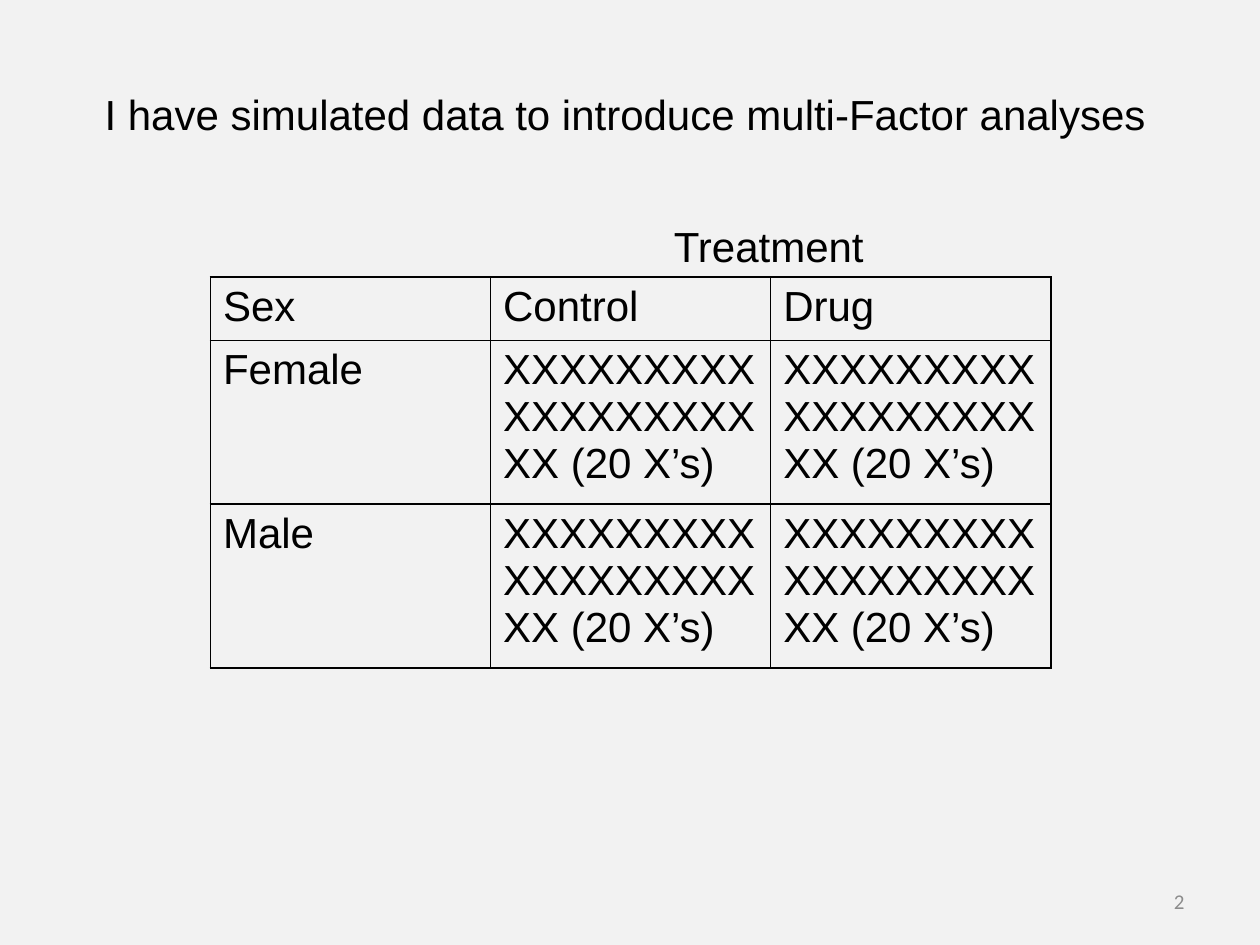
from lxml.etree import SubElement
from pptx import Presentation
from pptx.dml.color import RGBColor
from pptx.enum.text import MSO_ANCHOR, MSO_AUTO_SIZE, PP_ALIGN
from pptx.oxml.ns import qn
from pptx.util import Inches, Pt

BLACK = "000000"
BACKGROUND = "F2F2F2"
NUMBER_GREY = "8C8C8C"

OBSERVATIONS = "X" * 20 + " (20 X’s)"
DESIGN = [
    ["Sex", "Control", "Drug"],
    ["Female", OBSERVATIONS, OBSERVATIONS],
    ["Male", OBSERVATIONS, OBSERVATIONS],
]
ROW_HEIGHTS = [0.47, 1.22, 1.22]


def rgb(value):
    return RGBColor.from_string(value)


def write(frame, text, size=24, font="Arial", color=BLACK, align=PP_ALIGN.LEFT):
    frame.text = text
    paragraph = frame.paragraphs[0]
    paragraph.alignment = align
    for run in paragraph.runs:
        run.font.size = Pt(size)
        run.font.name = font
        run.font.bold = False
        run.font.color.rgb = rgb(color)


def add_title(slide, text, left, top, width, height):
    title = slide.shapes.title
    title.left, title.top = Inches(left), Inches(top)
    title.width, title.height = Inches(width), Inches(height)
    frame = title.text_frame
    frame.word_wrap = False
    frame.auto_size = MSO_AUTO_SIZE.SHAPE_TO_FIT_TEXT
    frame.vertical_anchor = MSO_ANCHOR.TOP
    write(frame, text)


def add_label(slide, text, left, top, width, height, wrap=False,
              anchor=MSO_ANCHOR.TOP, **style):
    label = slide.shapes.add_textbox(
        Inches(left), Inches(top), Inches(width), Inches(height))
    frame = label.text_frame
    frame.word_wrap = wrap
    frame.auto_size = MSO_AUTO_SIZE.NONE if wrap else MSO_AUTO_SIZE.SHAPE_TO_FIT_TEXT
    frame.vertical_anchor = anchor
    write(frame, text, **style)


def outline_cell(cell, color=BLACK, width=1):
    properties = cell._tc.get_or_add_tcPr()
    for position, side in enumerate(("lnL", "lnR", "lnT", "lnB")):
        line = SubElement(properties, qn(f"a:{side}"), w=str(Pt(width)))
        fill = SubElement(line, qn("a:solidFill"))
        SubElement(fill, qn("a:srgbClr"), val=color)
        properties.insert(position, line)


def add_design_table(slide, rows, left, top, width, row_heights):
    table = slide.shapes.add_table(
        len(rows), len(rows[0]), Inches(left), Inches(top),
        Inches(width), Inches(sum(row_heights))).table
    table.first_row = False
    table.horz_banding = False
    for row, height, texts in zip(table.rows, row_heights, rows):
        row.height = Inches(height)
        for cell, text in zip(row.cells, texts):
            write(cell.text_frame, text)
            cell.fill.background()
            outline_cell(cell)


def main():
    deck = Presentation()
    deck.slide_width, deck.slide_height = Inches(10), Inches(7.5)
    slide = deck.slides.add_slide(deck.slide_layouts[5])
    slide.background.fill.solid()
    slide.background.fill.fore_color.rgb = rgb(BACKGROUND)

    add_design_table(slide, DESIGN, 1.67, 2.2, 6.67, ROW_HEIGHTS)
    add_label(slide, "Treatment", 5.25, 1.7, 1.73, 0.5)
    add_title(slide, "I have simulated data to introduce multi-Factor analyses",
              0.73, 0.65, 8.55, 0.5)
    add_label(slide, "2", 7.17, 6.95, 2.33, 0.4, wrap=True,
              anchor=MSO_ANCHOR.MIDDLE, size=12, font="Calibri",
              color=NUMBER_GREY, align=PP_ALIGN.RIGHT)
    deck.save("out.pptx")


if __name__ == "__main__":
    main()
